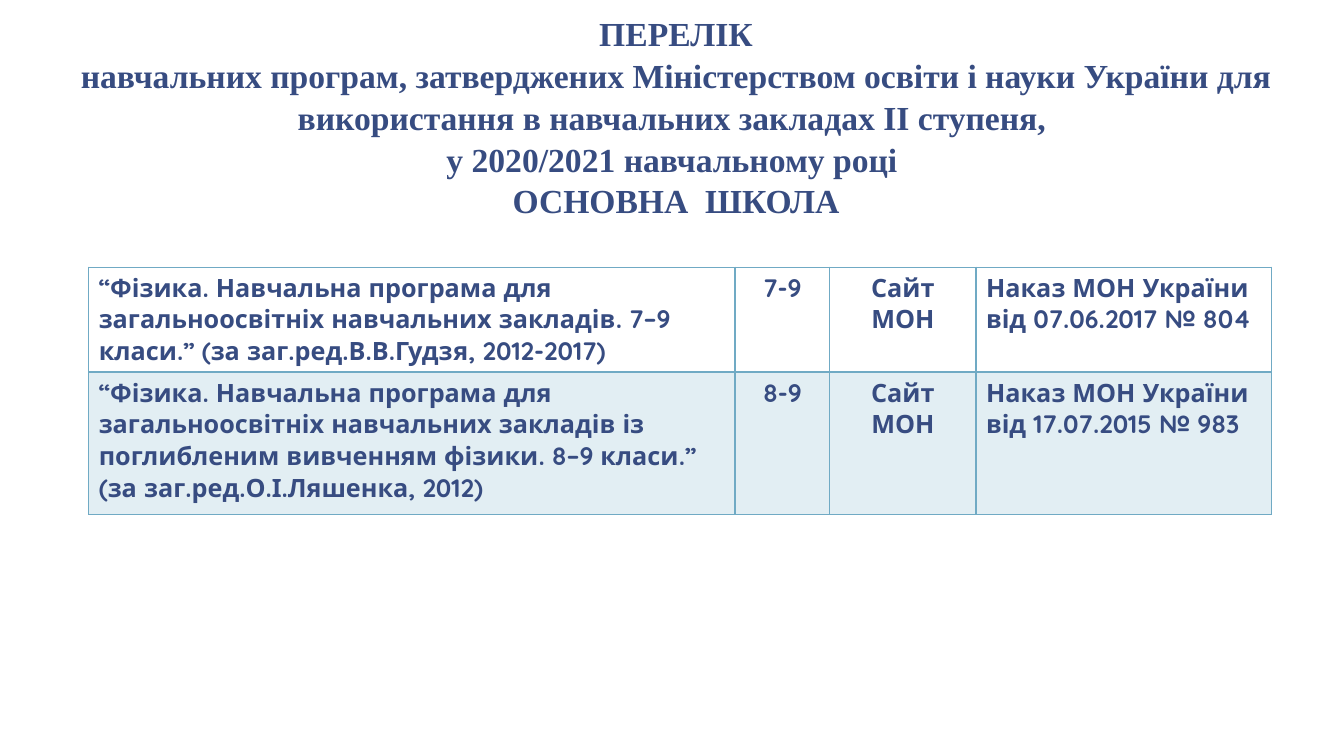
from lxml.etree import SubElement
from pptx import Presentation
from pptx.dml.color import RGBColor
from pptx.enum.text import MSO_ANCHOR, MSO_AUTO_SIZE, PP_ALIGN
from pptx.oxml.ns import qn
from pptx.util import Inches, Pt

NAVY = RGBColor(0x37, 0x4C, 0x81)
TEAL = RGBColor(0x70, 0xAA, 0xC4)

HEADING_LINES = [
    "ПЕРЕЛІК",
    "навчальних програм, затверджених Міністерством освіти і науки України "
    "для використання в навчальних закладах ІІ ступеня, ",
    "у 2020/2021 навчальному році ",
    "ОСНОВНА  ШКОЛА",
]
PROGRAMMES = [
    ("“Фізика. Навчальна програма для загальноосвітніх навчальних закладів. "
     "7–9 класи.” (за заг.ред.В.В.Гудзя, 2012-2017)",
     "7-9", "Сайт МОН", "Наказ МОН України від 07.06.2017 № 804"),
    ("“Фізика. Навчальна програма для загальноосвітніх навчальних закладів із "
     "поглибленим вивченням фізики. 8–9 класи.” (за заг.ред.О.І.Ляшенка, 2012)",
     "8-9", "Сайт МОН", "Наказ МОН України від 17.07.2015 № 983"),
]
COLUMN_WIDTHS = [6.41, 0.94, 1.45, 2.93]
COLUMN_ALIGNMENTS = [PP_ALIGN.LEFT, PP_ALIGN.CENTER, PP_ALIGN.CENTER, PP_ALIGN.LEFT]
ROW_HEIGHTS = [1.04, 1.41]
BOTTOM_BORDERS = [2, 1]


class ProgrammeSlide:
    title_font, title_size = "Times New Roman", Pt(24)
    table_font, table_size = "Quicksand", Pt(18)

    def __init__(self, deck):
        self.slide = deck.slides.add_slide(deck.slide_layouts[5])

    def add_text(self, paragraph, text, font, size):
        run = paragraph.add_run()
        run.text = text
        run.font.name, run.font.size, run.font.bold = font, size, True
        run.font.color.rgb = NAVY

    def title(self, lines):
        heading = self.slide.shapes.title
        heading.left, heading.top = Inches(0.65), Inches(0.08)
        heading.width, heading.height = Inches(12.11), Inches(2.18)
        frame = heading.text_frame
        frame.word_wrap = True
        frame.auto_size = MSO_AUTO_SIZE.NONE
        frame.vertical_anchor = MSO_ANCHOR.BOTTOM
        frame.margin_left = frame.margin_right = Inches(0.13)
        frame.margin_top = frame.margin_bottom = Inches(0.07)
        paragraph = frame.paragraphs[0]
        paragraph.alignment = PP_ALIGN.CENTER
        paragraph.line_spacing = 1.04
        for index, line in enumerate(lines):
            if index:
                paragraph.add_line_break()
            self.add_text(paragraph, line, self.title_font, self.title_size)

    def borders(self, cell, top, bottom):
        properties = cell._tc.get_or_add_tcPr()
        for side, points in (("L", 1), ("R", 1), ("T", top), ("B", bottom)):
            line = SubElement(properties, qn(f"a:ln{side}"), w=str(Pt(points)))
            fill = SubElement(line, qn("a:solidFill"))
            SubElement(fill, qn("a:srgbClr"), val=str(TEAL))

    def tint(self, cell, percent):
        """Fill the cell with translucent teal."""
        cell.fill.solid()
        cell.fill.fore_color.rgb = TEAL
        color = cell._tc.tcPr.find(qn("a:solidFill")).find(qn("a:srgbClr"))
        SubElement(color, qn("a:alpha"), val=str(percent * 1000))

    def table(self, rows):
        programmes = self.slide.shapes.add_table(
            len(rows), len(COLUMN_WIDTHS), Inches(0.88), Inches(2.65),
            Inches(sum(COLUMN_WIDTHS)), Inches(sum(ROW_HEIGHTS))).table
        programmes.first_row = programmes.horz_banding = False
        for column, width in zip(programmes.columns, COLUMN_WIDTHS):
            column.width = Inches(width)
        for r, entries in enumerate(rows):
            programmes.rows[r].height = Inches(ROW_HEIGHTS[r])
            for c, entry in enumerate(entries):
                cell = programmes.cell(r, c)
                self.borders(cell, BOTTOM_BORDERS[r - 1] if r else 1, BOTTOM_BORDERS[r])
                if r % 2:
                    self.tint(cell, 20)
                else:
                    cell.fill.background()
                paragraph = cell.text_frame.paragraphs[0]
                paragraph.alignment = COLUMN_ALIGNMENTS[c]
                self.add_text(paragraph, entry, self.table_font, self.table_size)


def main():
    deck = Presentation()
    deck.slide_width, deck.slide_height = Inches(13.33), Inches(7.5)
    page = ProgrammeSlide(deck)
    page.title(HEADING_LINES)
    page.table(PROGRAMMES)
    deck.save("out.pptx")


if __name__ == "__main__":
    main()
